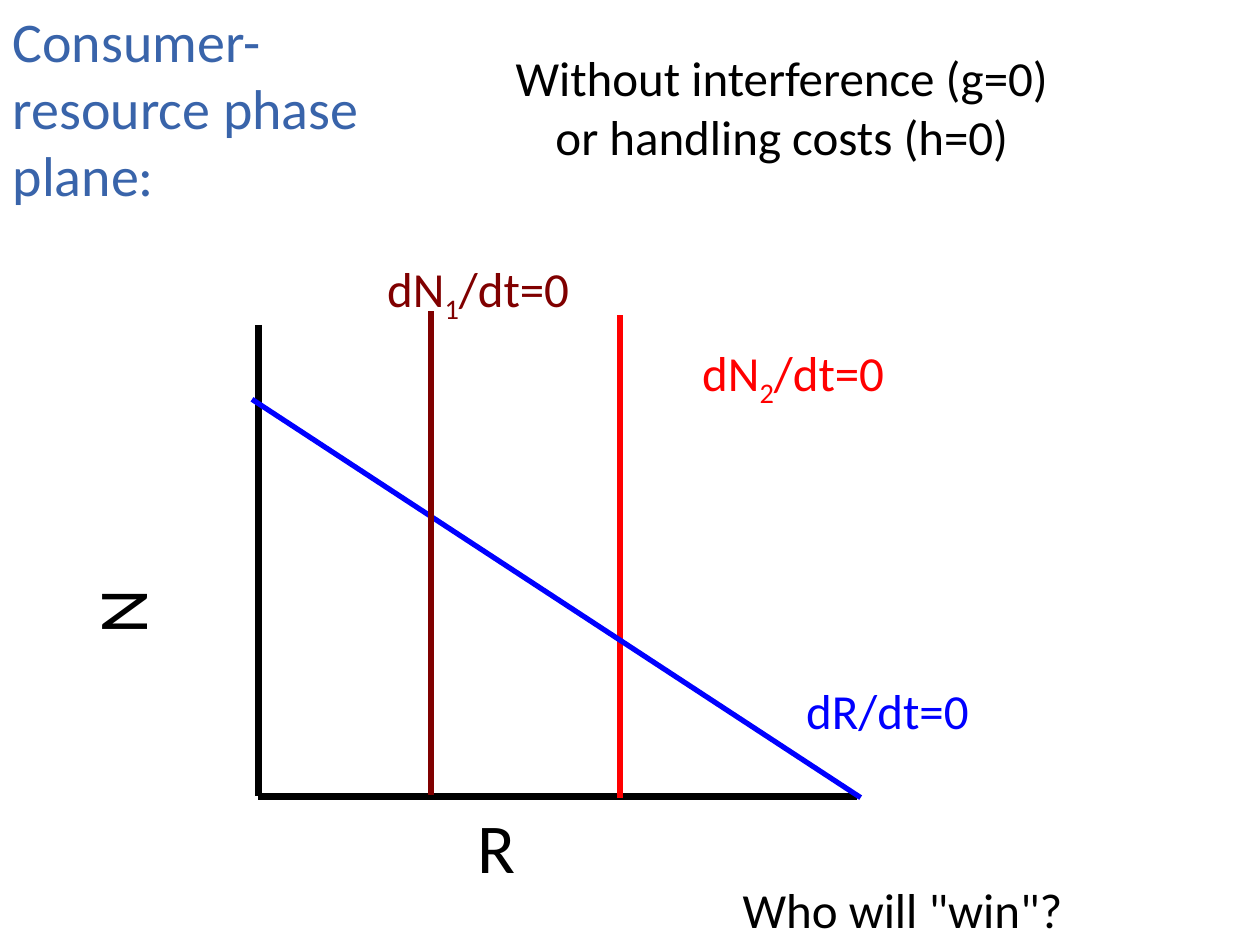
from lxml import etree
from pptx import Presentation
from pptx.dml.color import RGBColor
from pptx.enum.shapes import MSO_CONNECTOR
from pptx.enum.text import MSO_ANCHOR, MSO_AUTO_SIZE, PP_ALIGN
from pptx.oxml.ns import qn
from pptx.util import Cm, Pt

LINE = MSO_CONNECTOR.STRAIGHT
TOP = MSO_ANCHOR.TOP
GROW = MSO_AUTO_SIZE.SHAPE_TO_FIT_TEXT
LEFT, CENTER = PP_ALIGN.LEFT, PP_ALIGN.CENTER
FONT = "Calibri"
COLORS = {
    "black": "000000",
    "title": "3964AA",
    "red": "FF0000",
    "blue": "0000FF",
    "maroon": "800000",
}
LABEL_W, LABEL_H = 6.98, 1.45
AXIS_X, AXIS_Y = 5.21, 16.05


def rgb(name):
    return RGBColor.from_string(COLORS[name])


def write(box, *parts, size=28, color="black", align=CENTER, wrap=True, space=1.0):
    frame = box.text_frame
    frame.word_wrap = wrap
    frame.auto_size = GROW
    frame.vertical_anchor = TOP
    para = frame.paragraphs[0]
    para.alignment = align
    para.line_spacing = space
    for i, part in enumerate(parts):
        run = para.add_run()
        run.text = part
        run.font.name = FONT
        run.font.size = Pt(size)
        run.font.color.rgb = rgb(color)
        if i == 1:
            run._r.get_or_add_rPr().set("baseline", "-25000")


def place(box, x, y, w, h):
    box.left, box.top, box.width, box.height = Cm(x), Cm(y), Cm(w), Cm(h)


def add_text(shapes, x, y, w, h, *parts, turn=0, **style):
    box = shapes.add_textbox(Cm(x), Cm(y), Cm(w), Cm(h))
    box.rotation = turn
    write(box, *parts, **style)


def add_line(shapes, x1, y1, x2, y2, color="black", width=3):
    line = shapes.add_connector(LINE, Cm(x1), Cm(y1), Cm(x2), Cm(y2))
    line.line.color.rgb = rgb(color)
    line.line.width = Pt(width)
    etree.SubElement(line._element.spPr, qn("a:effectLst"))


def add_axes(shapes):
    group = shapes.add_group_shape().shapes
    add_line(group, AXIS_X, 6.55, AXIS_X, AXIS_Y, width=4)
    add_line(group, AXIS_X, AXIS_Y, 17.27, AXIS_Y, width=4)
    style = dict(size=40, align=LEFT, wrap=False, space=1.15)
    add_text(group, 9.37, 15.82, 1.4, 2.18, "R", **style)
    add_text(group, 1.45, 11.13, 1.65, 2.18, "N", turn=270, **style)


def add_cline(shapes, x, top, base, left, y, index, color):
    group = shapes.add_group_shape().shapes
    add_line(group, x, top, x, base, color)
    add_text(group, left, y, LABEL_W, LABEL_H, "dN", index, "/dt=0", color=color)


def main():
    deck = Presentation()
    deck.slide_width, deck.slide_height = Cm(25.4), Cm(19.05)
    slide = deck.slides.add_slide(deck.slide_layouts[5])
    shapes = slide.shapes

    place(shapes.title, 0, 0, 8.25, 4.37)
    write(shapes.title, "Consumer-resource phase plane:", size=32,
          color="title", align=LEFT)
    add_axes(shapes)
    add_cline(shapes, 12.5, 6.35, 16.08, 12.5, 6.78, "2", "red")
    add_line(shapes, 5.08, 8.05, 17.35, 16.08, "blue")
    add_text(shapes, 9.73, 0.84, 12.06, 3.84,
             "Without interference (g=0) or handling costs (h=0)")
    add_text(shapes, 14.4, 13.59, LABEL_W, LABEL_H, "dR/dt=0", color="blue")
    add_cline(shapes, 8.69, 6.27, 16.03, 6.15, 5.08, "1", "maroon")
    add_text(shapes, 10.36, 17.6, 15.67, LABEL_H, 'Who will "win"?')
    deck.save("out.pptx")


if __name__ == "__main__":
    main()
